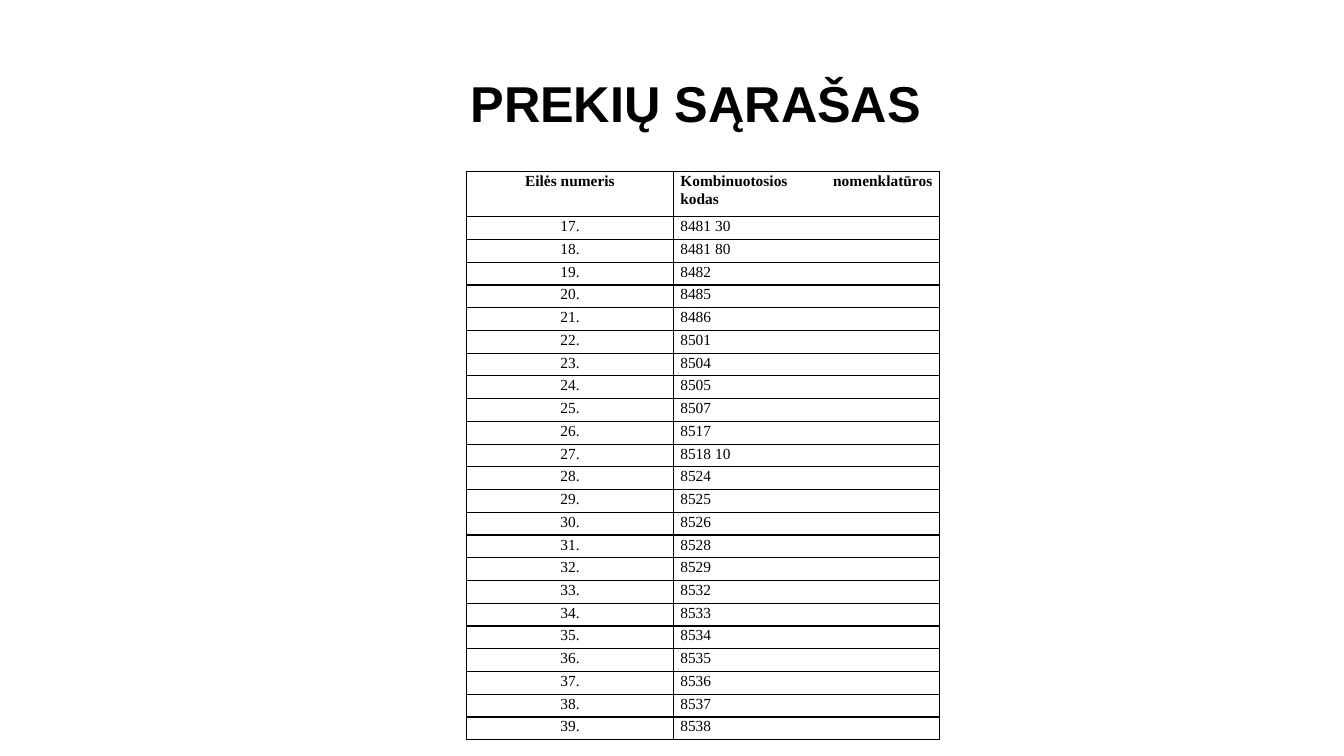
from lxml import etree
from pptx import Presentation
from pptx.dml.color import RGBColor
from pptx.enum.text import MSO_ANCHOR, PP_ALIGN
from pptx.oxml.ns import qn
from pptx.util import Pt

CENTER, JUSTIFY = PP_ALIGN.CENTER, PP_ALIGN.JUSTIFY
MIDDLE = MSO_ANCHOR.MIDDLE
BLANK_LAYOUT = 6

COLORS = {"text": "000000", "border": "000000", "page": "FFFFFF"}

TITLE_BOX = (90, 28.8, 804.24, 93.6)
TABLE_BOX = (333.36, 122.4, 337.8, 406.15)
COLUMN_SHARES = (0.437, 0.563)
HEADER_HEIGHT = 32.4

HEADERS = ("Eilės numeris", "Kombinuotosios nomenklatūros kodas")
FIRST_NUMBER = 17
CODES = (
    "8481 30", "8481 80", "8482", "8485", "8486", "8501", "8504", "8505",
    "8507", "8517", "8518 10", "8524", "8525", "8526", "8528", "8529",
    "8532", "8533", "8534", "8535", "8536", "8537", "8538",
)


def write_text(frame, text, *, font, size, bold=False, align=CENTER,
               line_spacing=1.0, space_after=0):
    frame.word_wrap = True
    para = frame.paragraphs[0]
    para.alignment = align
    para.line_spacing = line_spacing
    para.space_after = Pt(space_after)
    span = para.add_run()
    span.text = text
    span.font.name = font
    span.font.size = Pt(size)
    span.font.bold = bold
    span.font.color.rgb = RGBColor.from_string(COLORS["text"])


def add_borders(cell, width=1):
    properties = cell._tc.get_or_add_tcPr()
    for side in ("a:lnL", "a:lnR", "a:lnT", "a:lnB"):
        line = etree.SubElement(properties, qn(side), w=str(Pt(width)))
        fill = etree.SubElement(line, qn("a:solidFill"))
        etree.SubElement(fill, qn("a:srgbClr"), val=COLORS["border"])


def add_title(page, box):
    shape = page.shapes.add_textbox(*map(Pt, box))
    shape.text_frame.vertical_anchor = MIDDLE
    write_text(shape.text_frame, " PREKIŲ SĄRAŠAS", font="Arial", size=36,
               bold=True, line_spacing=0.9)


def fill_cell(cell, text, align, bold):
    cell.margin_left = cell.margin_right = Pt(5)
    cell.margin_top = cell.margin_bottom = 0
    add_borders(cell)
    cell.fill.background()
    write_text(cell.text_frame, text, font="Times New Roman", size=11,
               bold=bold, align=align, line_spacing=1.07, space_after=8)


def add_goods_table(page, box):
    left, top, width, height = box
    numbered = [(f"{number}.", code)
                for number, code in enumerate(CODES, FIRST_NUMBER)]
    records = [HEADERS, *numbered]
    frame = page.shapes.add_table(len(records), len(HEADERS), *map(Pt, box))
    table = frame.table
    table.first_row = table.horz_banding = False
    for column, share in zip(table.columns, COLUMN_SHARES):
        column.width = Pt(width * share)
    row_height = (height - HEADER_HEIGHT) / len(CODES)
    for index, record in enumerate(records):
        is_header = index == 0
        row = table.rows[index]
        row.height = Pt(HEADER_HEIGHT if is_header else row_height)
        for cell, text, align in zip(row.cells, record, (CENTER, JUSTIFY)):
            fill_cell(cell, text, align, is_header)


def main():
    deck = Presentation()
    deck.slide_width, deck.slide_height = Pt(960), Pt(540)
    page = deck.slides.add_slide(deck.slide_layouts[BLANK_LAYOUT])
    page.background.fill.solid()
    page.background.fill.fore_color.rgb = RGBColor.from_string(COLORS["page"])
    add_title(page, TITLE_BOX)
    add_goods_table(page, TABLE_BOX)
    deck.save("out.pptx")


if __name__ == "__main__":
    main()
